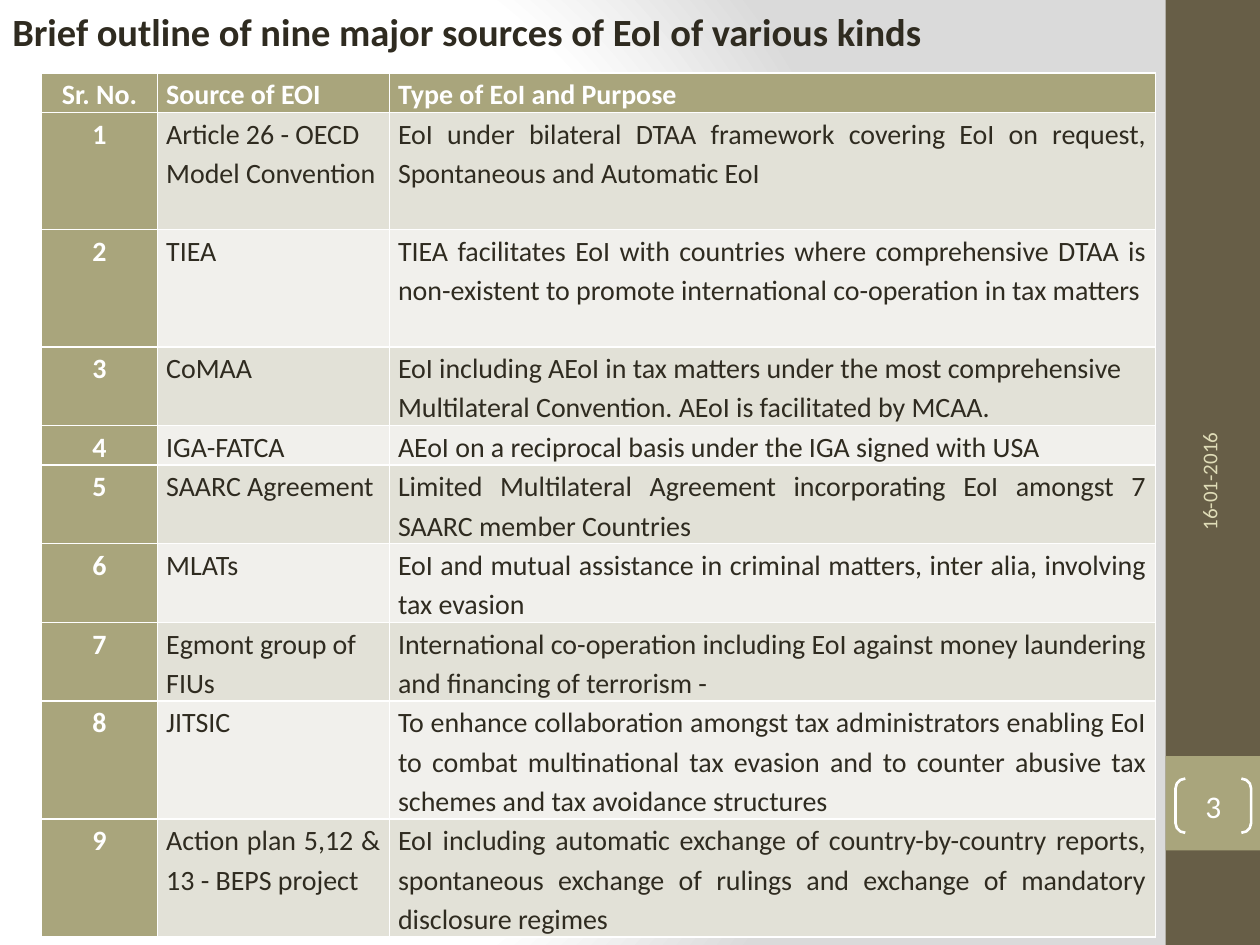
from dataclasses import dataclass

from pptx import Presentation
from pptx.dml.color import RGBColor
from pptx.enum.shapes import MSO_SHAPE
from pptx.enum.text import MSO_ANCHOR, PP_ALIGN
from pptx.oxml import parse_xml
from pptx.oxml.ns import nsdecls
from pptx.util import Inches, Pt

TITLE = "Brief outline of nine major sources of EoI of various kinds"
DATE = "16-01-2016"
PAGE_NUMBER = "3"
HEADER = ("Sr. No.", "Source of EOI", "Type of EoI and Purpose")
LEFT, CENTER, JUSTIFY = PP_ALIGN.LEFT, PP_ALIGN.CENTER, PP_ALIGN.JUSTIFY

# Source, its alignment, purpose, its alignment, height in lines
SOURCES = [
    ("Article 26 - OECD Model Convention", LEFT,
     "EoI under bilateral DTAA framework covering EoI on request, "
     "Spontaneous and Automatic EoI", JUSTIFY, 3),
    ("TIEA", LEFT,
     "TIEA facilitates EoI with countries where comprehensive DTAA is "
     "non-existent to promote international co-operation in tax matters", JUSTIFY, 3),
    ("CoMAA", LEFT,
     "EoI including AEoI in tax matters under the most comprehensive "
     "Multilateral Convention. AEoI is facilitated by MCAA.", LEFT, 2),
    ("IGA-FATCA", LEFT,
     "AEoI on a reciprocal basis under the IGA signed with USA", JUSTIFY, 1),
    ("SAARC Agreement", LEFT,
     "Limited Multilateral Agreement incorporating EoI amongst 7 "
     "SAARC member Countries", JUSTIFY, 2),
    ("MLATs", LEFT,
     "EoI and mutual assistance in criminal matters, inter alia, "
     "involving tax evasion", JUSTIFY, 2),
    ("Egmont group of FIUs", LEFT,
     "International co-operation including EoI against money laundering "
     "and financing of terrorism -", JUSTIFY, 2),
    ("JITSIC", LEFT,
     "To enhance collaboration amongst tax administrators enabling EoI to "
     "combat multinational tax evasion and to counter abusive tax schemes "
     "and tax avoidance structures", JUSTIFY, 3),
    ("Action plan 5,12 & 13 - BEPS project", JUSTIFY,
     "EoI including automatic exchange of country-by-country reports, "
     "spontaneous exchange of rulings and exchange of mandatory "
     "disclosure regimes", JUSTIFY, 3),
]
COLUMN_WIDTHS = (0.92, 1.84, 6.08)
LINE_HEIGHT = 0.31


@dataclass(frozen=True)
class Theme:
    font: str = "Calibri"
    ink: str = "2F2B20"
    white: str = "FFFFFF"
    shade: str = "DADADA"
    sidebar: str = "675E47"
    accent: str = "A9A57C"
    date: str = "DFDCB7"
    bands: tuple = ("E2E1D7", "F1F0EC")
    title_size: int = 22
    number_size: int = 18
    table_size: int = 16
    date_size: int = 12


THEME = Theme()


def color(value):
    return RGBColor.from_string(value)


def write(frame, text, size, ink, bold=False, alignment=LEFT):
    paragraph = frame.paragraphs[0]
    paragraph.text = text
    paragraph.alignment = alignment
    font = paragraph.font
    font.name, font.size, font.bold = THEME.font, Pt(size), bold
    font.color.rgb = color(ink)
    return paragraph


def add_background(slide):
    """Fill the slide with a radial gradient, white fading to grey."""
    slide.background.fill.solid()
    properties = slide._element.cSld.bg.bgPr
    stops = "".join(
        f'<a:gs pos="{position * 1000}"><a:srgbClr val="{value}"/></a:gs>'
        for position, value in ((0, THEME.white), (75, THEME.white), (100, THEME.shade)))
    gradient = parse_xml(
        f'<a:gradFill {nsdecls("a")} rotWithShape="1"><a:gsLst>{stops}</a:gsLst>'
        '<a:path path="circle"><a:fillToRect l="20000" t="50000" r="100000" b="50000"/>'
        '</a:path></a:gradFill>')
    properties.replace(properties[0], gradient)


def add_block(slide, top, height, fill):
    shape = slide.shapes.add_shape(
        MSO_SHAPE.RECTANGLE, Inches(9.25), Inches(top), Inches(0.75), Inches(height))
    shape.shadow.inherit = False
    shape.fill.solid()
    shape.fill.fore_color.rgb = color(fill)
    shape.line.fill.background()


def add_page_number(slide):
    shape = slide.shapes.add_shape(
        MSO_SHAPE.DOUBLE_BRACKET, Inches(9.33), Inches(6.18), Inches(0.6), Inches(0.43))
    shape.adjustments[0] = 0.18
    shape.shadow.inherit = False
    shape.fill.background()
    shape.line.color.rgb = color(THEME.white)
    shape.line.width = Pt(1.5)
    frame = shape.text_frame
    frame.margin_left = frame.margin_right = frame.margin_top = frame.margin_bottom = 0
    frame.vertical_anchor = MSO_ANCHOR.MIDDLE
    write(frame, PAGE_NUMBER, THEME.number_size, THEME.white, alignment=CENTER)


def fill_cell(cell, text, fill, ink, bold, alignment):
    cell.fill.solid()
    cell.fill.fore_color.rgb = color(fill)
    cell.margin_left = cell.margin_right = Inches(0.07)
    cell.margin_top = cell.margin_bottom = 0
    paragraph = write(cell.text_frame, text, THEME.table_size, ink, bold, alignment)
    paragraph.line_spacing = 1.15
    paragraph.space_after = Pt(5)


def add_sources_table(slide):
    line_counts = [1] + [source[-1] for source in SOURCES]
    table = slide.shapes.add_table(
        len(line_counts), len(HEADER), Inches(0.33), Inches(0.58),
        Inches(sum(COLUMN_WIDTHS)), Inches(LINE_HEIGHT * sum(line_counts))).table
    for column, width in zip(table.columns, COLUMN_WIDTHS):
        column.width = Inches(width)
    for row, lines in zip(table.rows, line_counts):
        row.height = Inches(LINE_HEIGHT * lines)

    for column, (text, alignment) in enumerate(zip(HEADER, (CENTER, LEFT, LEFT))):
        fill_cell(table.cell(0, column), text, THEME.accent, THEME.white, True, alignment)
    for row, (source, source_alignment, purpose, purpose_alignment, _) in enumerate(SOURCES, 1):
        band = THEME.bands[(row - 1) % 2]
        fill_cell(table.cell(row, 0), str(row), THEME.accent, THEME.white, True, CENTER)
        fill_cell(table.cell(row, 1), source, band, THEME.ink, False, source_alignment)
        fill_cell(table.cell(row, 2), purpose, band, THEME.ink, False, purpose_alignment)


def add_text(slide, box, text, size, ink, bold=False, alignment=LEFT, rotation=0):
    shape = slide.shapes.add_textbox(*map(Inches, box))
    shape.rotation = rotation
    shape.text_frame.word_wrap = True
    shape.text_frame.vertical_anchor = MSO_ANCHOR.MIDDLE
    write(shape.text_frame, text, size, ink, bold, alignment)


def main():
    presentation = Presentation()
    presentation.slide_width, presentation.slide_height = Inches(10), Inches(7.5)
    slide = presentation.slides.add_slide(presentation.slide_layouts[6])
    add_background(slide)
    add_block(slide, 0, 7.5, THEME.sidebar)
    add_block(slide, 6, 0.75, THEME.accent)
    add_page_number(slide)
    add_sources_table(slide)
    add_text(slide, (0, 0.01, 9.17, 0.47), TITLE, THEME.title_size, THEME.ink, bold=True)
    add_text(slide, (8.3, 4.43, 2.59, 0.4), DATE, THEME.date_size, THEME.date,
             alignment=PP_ALIGN.RIGHT, rotation=270)
    presentation.save("out.pptx")


if __name__ == "__main__":
    main()
